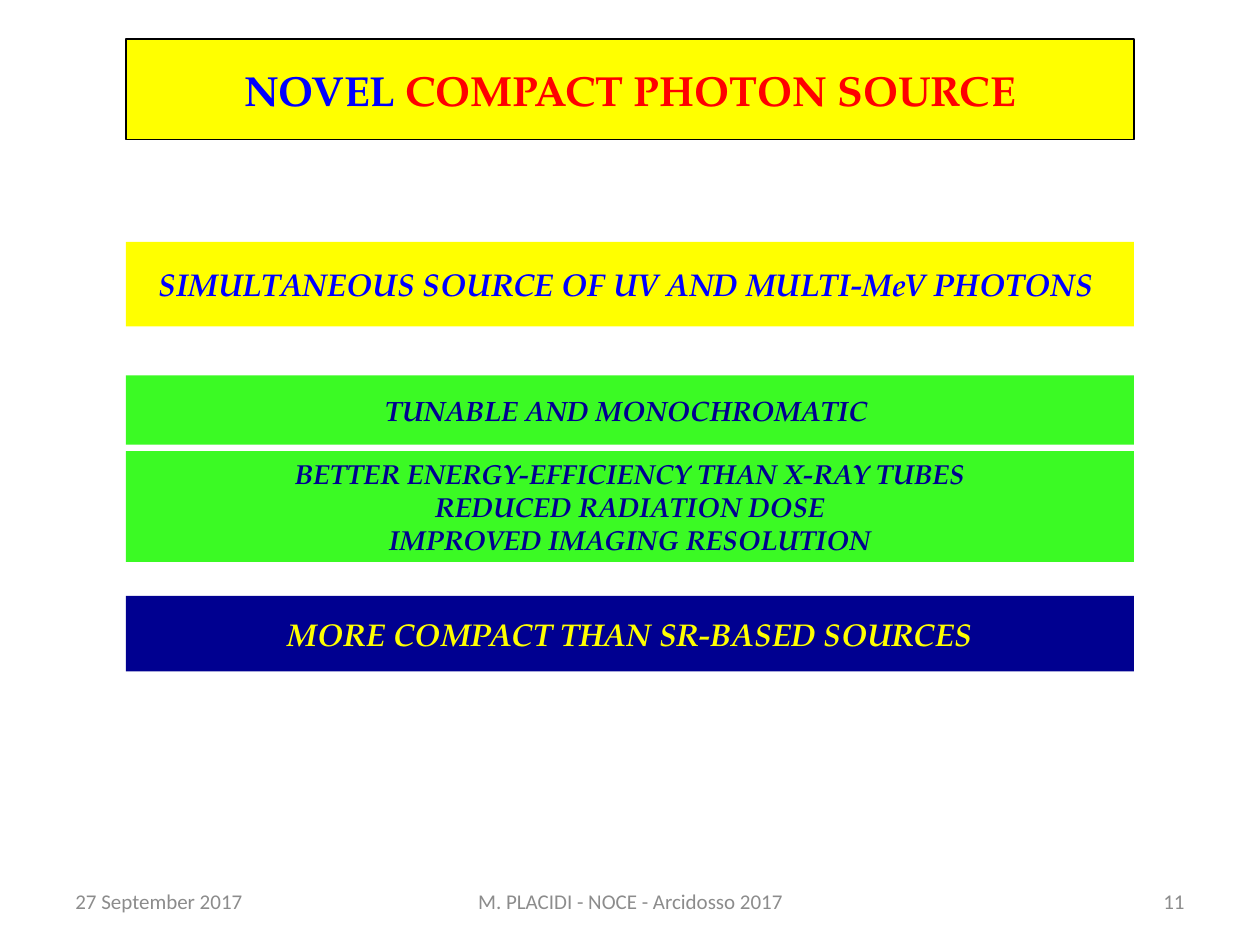
from pptx import Presentation
from pptx.dml.color import RGBColor
from pptx.enum.shapes import MSO_SHAPE as SHAPE
from pptx.enum.text import MSO_ANCHOR as ANCHOR, MSO_AUTO_SIZE as AUTOSIZE, PP_ALIGN as ALIGN
from pptx.util import Inches, Pt

COLS, ROWS = 10, 75
YELLOW, GREEN, NAVY = "FFFF00", "3BFA24", "000090"
BLUE, RED, GREY, BLACK = "0000FF", "FF0000", "8C8C8C", "000000"


def rgb(value):
    return RGBColor.from_string(value)


class Deck:
    serif, sans = "TeX Gyre Pagella", "Calibri"
    left, span = 1, 8

    def __init__(self):
        self.prs = Presentation()
        self.prs.slide_width, self.prs.slide_height = Inches(10), Inches(7.5)
        self.s = self.prs.slides.add_slide(self.prs.slide_layouts[5])

    def box(self, col, row, cols, rows):
        w, h = self.prs.slide_width / COLS, self.prs.slide_height / ROWS
        return round(col * w), round(row * h), round(cols * w), round(rows * h)

    def add_text(self, sp, lines, size, font, align=ALIGN.CENTER, bold=False, italic=False):
        tf = sp.text_frame
        tf.word_wrap, tf.auto_size = True, AUTOSIZE.NONE
        tf.vertical_anchor = ANCHOR.MIDDLE
        for i, runs in enumerate(lines):
            p = tf.add_paragraph() if i else tf.paragraphs[0]
            p.alignment = align
            for text, color in runs:
                r = p.add_run()
                r.text = text
                r.font.name, r.font.size = font, Pt(size)
                r.font.bold, r.font.italic = bold, italic
                r.font.color.rgb = rgb(color)

    def fill(self, sp, color):
        sp.fill.solid()
        sp.fill.fore_color.rgb = rgb(color)

    def title(self, row, rows, runs):
        sp = self.s.shapes.title
        sp.left, sp.top, sp.width, sp.height = self.box(self.left, row, self.span, rows)
        self.fill(sp, YELLOW)
        sp.line.color.rgb = rgb(BLACK)
        sp.line.width = Pt(0.75)
        self.add_text(sp, [runs], 24, self.serif, bold=True)

    def banner(self, row, rows, texts, fill, color, size, parent=None):
        shapes = (parent or self.s).shapes
        sp = shapes.add_shape(SHAPE.RECTANGLE, *self.box(self.left, row, self.span, rows))
        sp.shadow.inherit = False
        self.fill(sp, fill)
        sp.line.fill.background()
        self.add_text(sp, [[(t, color)] for t in texts], size, self.serif, bold=True, italic=True)

    def group(self):
        return self.s.shapes.add_group_shape()

    def footer(self, col, cols, text, align):
        sp = self.s.shapes.add_textbox(*self.box(col, 69.5, cols, 4))
        self.add_text(sp, [[(text, GREY)]], 12, self.sans, align)


def main():
    deck = Deck()
    deck.title(3.1, 8, [("NOVEL ", BLUE), ("COMPACT PHOTON SOURCE", RED)])
    deck.banner(19.2, 6.7, ["SIMULTANEOUS SOURCE OF UV AND MULTI-MeV PHOTONS "], YELLOW, BLUE, 18)
    benefits = deck.group()
    deck.banner(29.8, 5.5, ["TUNABLE AND MONOCHROMATIC "], GREEN, NAVY, 16, benefits)
    deck.banner(35.8, 8.8, [
        "BETTER ENERGY-EFFICIENCY THAN X-RAY TUBES",
        "REDUCED RADIATION DOSE",
        "IMPROVED IMAGING RESOLUTION",
    ], GREEN, NAVY, 15.7, benefits)
    deck.banner(47.3, 6, ["MORE COMPACT THAN SR-BASED SOURCES"], NAVY, YELLOW, 18)
    deck.footer(0.5, 2.33, "27 September 2017", ALIGN.LEFT)
    deck.footer(3.42, 3.17, "M. PLACIDI - NOCE - Arcidosso 2017", ALIGN.CENTER)
    deck.footer(7.17, 2.33, "11", ALIGN.RIGHT)
    deck.prs.save("out.pptx")


if __name__ == "__main__":
    main()
